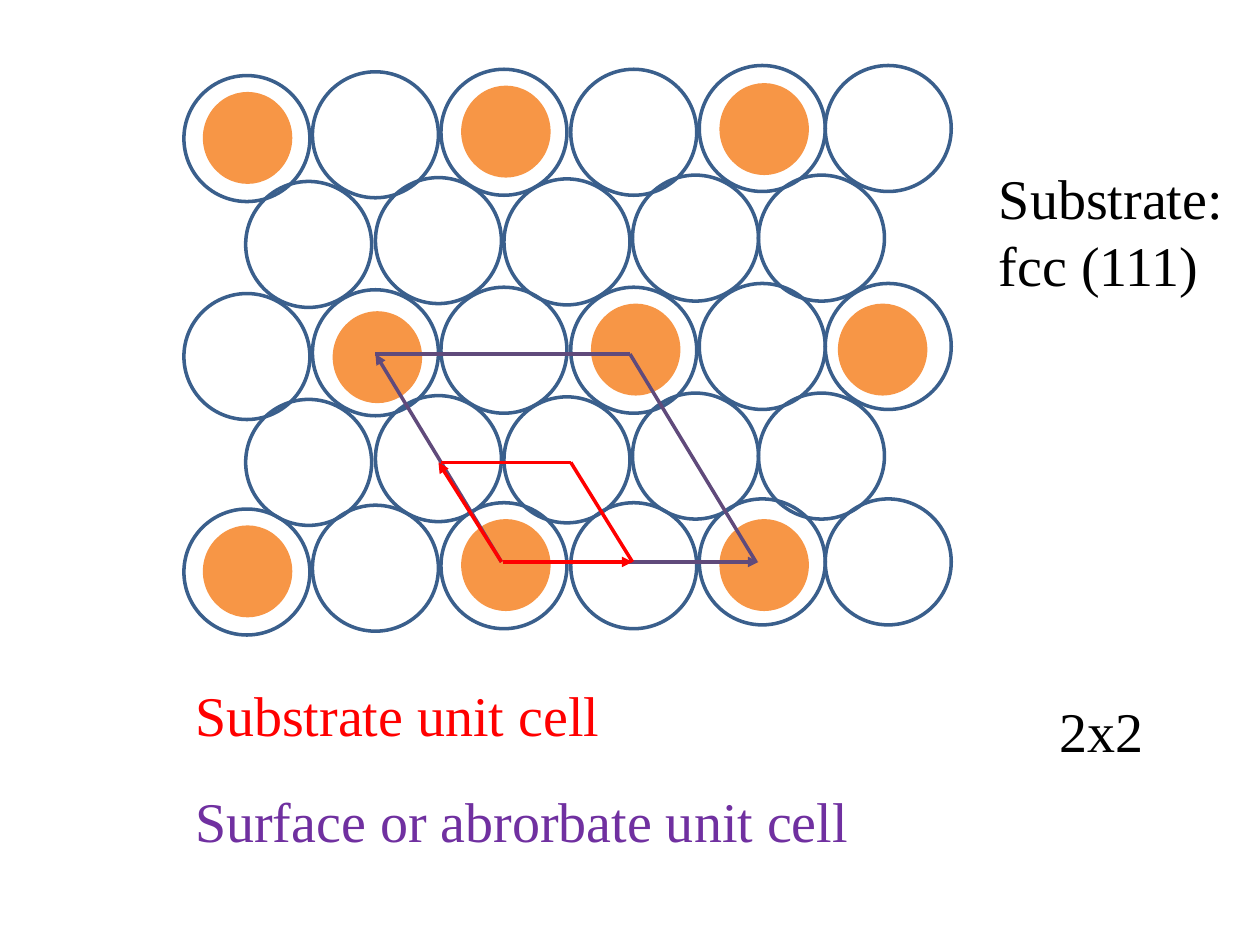
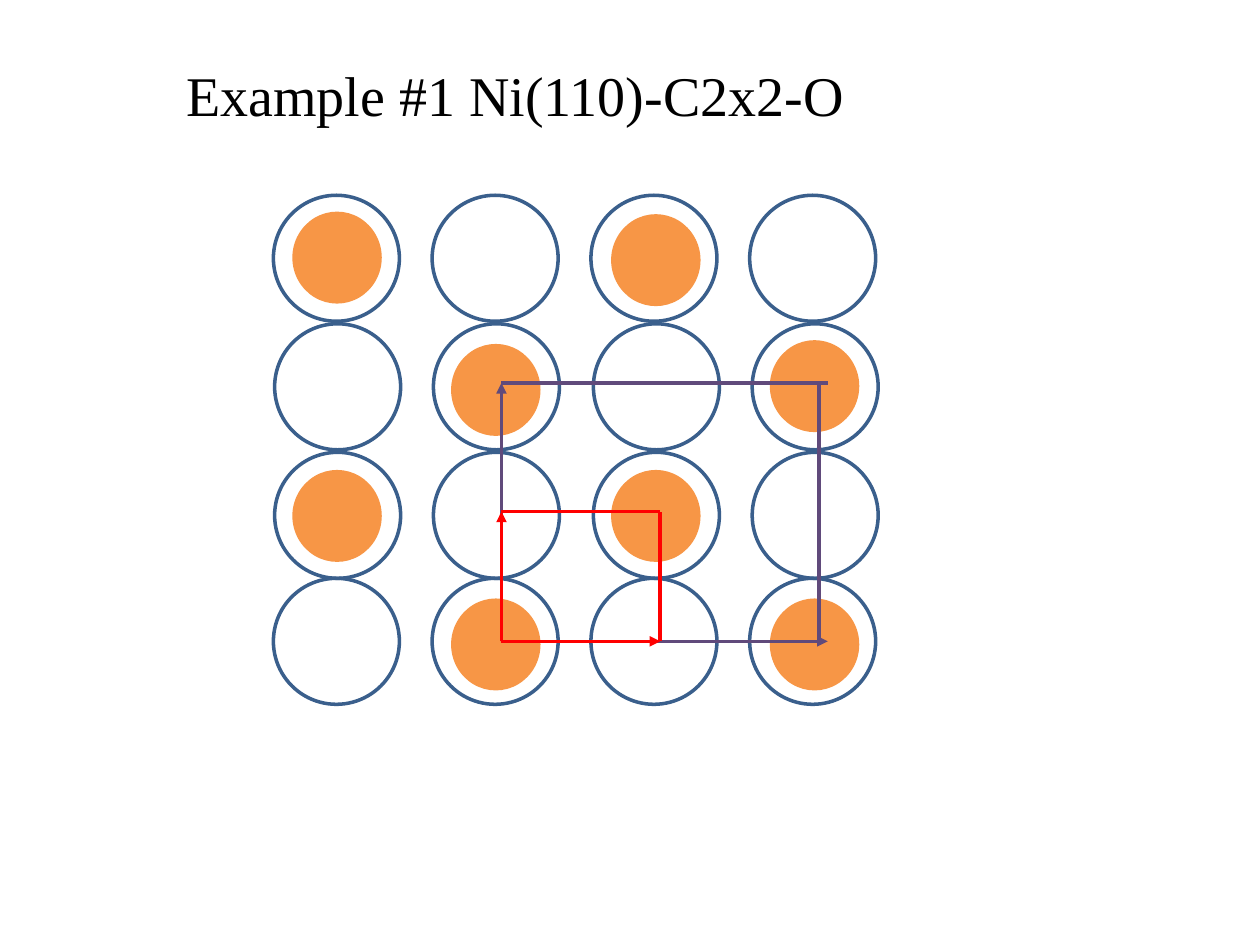
from dataclasses import dataclass

import pptx
import pptx.dml.color
import pptx.enum.shapes
import pptx.enum.text
import pptx.oxml.ns
import pptx.util
from lxml import etree

PX = 9144  # EMU per px, 100 px to the inch


@dataclass(frozen=True)
class Theme:
    font: str = "Times New Roman"
    text_size: int = 32
    line_width: int = 2
    text: str = "000000"
    atom: str = "3A5F8C"
    adsorbate: str = "F79646"
    substrate_cell: str = "FF0000"
    surface_cell: str = "604A7B"
    surface_label: str = "7030A0"


THEME = Theme()
ATOM_SIZE = (100, 100)
ADSORBATE_SIZE = (71, 73)


@dataclass(frozen=True)
class Row:
    """A row of circles: shared top, left edges, and how far each one sits below the top."""
    top: int
    lefts: tuple
    drops: tuple = (0,) * 6


@dataclass(frozen=True)
class Edge:
    """One side of a unit cell; lattice vectors carry an arrowhead."""
    start: tuple
    end: tuple
    color: str
    vector: bool = False


def px(length: int) -> int:
    return pptx.util.Emu(length * PX)


def rgb(color: str) -> pptx.dml.color.RGBColor:
    return pptx.dml.color.RGBColor.from_string(color)


def add_label(slide, text: str, left: int, top: int, width: int, height: int = 64, *,
              color: str = THEME.text, size: int = THEME.text_size) -> None:
    frame = slide.shapes.add_textbox(px(left), px(top), px(width), px(height)).text_frame
    frame.word_wrap = False
    frame.auto_size = pptx.enum.text.MSO_AUTO_SIZE.SHAPE_TO_FIT_TEXT
    frame.text = text
    for paragraph in frame.paragraphs:
        font = paragraph.runs[0].font
        font.name, font.size = THEME.font, pptx.util.Pt(size)
        font.color.rgb = rgb(color)


def add_circles(slide, rows: list, size: tuple, *, fill: str = "", line: str = "") -> None:
    for row in rows:
        for left, drop in zip(row.lefts, row.drops):
            circle = slide.shapes.add_shape(
                pptx.enum.shapes.MSO_SHAPE.OVAL,
                px(left), px(row.top + drop), px(size[0]), px(size[1]))
            circle.shadow.inherit = False
            if fill:
                circle.fill.solid()
                circle.fill.fore_color.rgb = rgb(fill)
            else:
                circle.fill.background()
            if line:
                circle.line.color.rgb = rgb(line)
                circle.line.width = pptx.util.Pt(THEME.line_width)
            else:
                circle.line.fill.background()


def add_edges(slide, edges: list) -> None:
    qn = pptx.oxml.ns.qn
    for edge in edges:
        side = slide.shapes.add_connector(
            pptx.enum.shapes.MSO_CONNECTOR.STRAIGHT,
            *(px(value) for value in edge.start + edge.end))
        side.line.color.rgb = rgb(edge.color)
        side.line.width = pptx.util.Pt(THEME.line_width)
        if edge.vector:
            etree.SubElement(side.line._get_or_add_ln(), qn("a:tailEnd"), type="triangle")
        etree.SubElement(side._element.spPr, qn("a:effectLst"))


def add_lattice(slide, atoms: list, adsorbates: list, edges: list) -> None:
    add_circles(slide, atoms, ATOM_SIZE, line=THEME.atom)
    add_circles(slide, adsorbates, ADSORBATE_SIZE, fill=THEME.adsorbate)
    add_edges(slide, edges)


def build_fcc_slide(slide) -> None:
    red, purple = THEME.substrate_cell, THEME.surface_cell

    # Close-packed rows: six atoms alternate with five
    long_lefts, long_drops = (146, 248, 350, 453, 555, 655), (8, 5, 3, 3, 0, 0)
    short_lefts, short_drops = (195, 298, 400, 502, 602), (5, 2, 3, 0, 0)
    atoms = [Row(top, long_lefts, long_drops) for top in (52, 225, 396)]
    atoms += [Row(top, short_lefts, short_drops) for top in (139, 312)]

    # Adsorbates on every second atom of the long rows
    outer_lefts = (161, 366, 571)
    adsorbates = [
        Row(66, outer_lefts, (7, 2, 0)),
        Row(241, (264, 469, 665), (6, 0, 0)),
        Row(412, outer_lefts, (5, 0, 0)),
    ]

    # Unit cells
    edges = [
        Edge((400, 446), (602, 446), purple, vector=True),
        Edge((399, 446), (502, 446), red, vector=True),
        Edge((398, 446), (298, 281), purple, vector=True),
        Edge((398, 446), (348, 367), red, vector=True),
        Edge((350, 367), (453, 367), red),
        Edge((502, 446), (453, 367), red),
        Edge((600, 446), (500, 281), purple),
        Edge((298, 281), (500, 281), purple),
    ]
    add_lattice(slide, atoms, adsorbates, edges)

    # Labels
    add_label(slide, "Substrate:\nfcc (111)", 783, 125, 200, 118)
    add_label(slide, "Substrate unit cell", 145, 535, 344, color=red)
    add_label(slide, "Surface or abrorbate unit cell", 145, 619, 544, color=THEME.surface_label)
    add_label(slide, "2x2", 831, 548, 88)


def build_nickel_slide(slide) -> None:
    red, purple = THEME.substrate_cell, THEME.surface_cell
    add_label(slide, "Example #1 Ni(110)-C2x2-O", 138, 43, 547)

    # Rectangular lattice: the outer rows sit slightly left of the inner ones
    outer_lefts, inner_lefts = (217, 343, 469, 595), (218, 344, 471, 597)
    atoms = [Row(155, outer_lefts), Row(257, inner_lefts),
             Row(359, inner_lefts), Row(459, outer_lefts)]

    # Adsorbates in a checkerboard
    odd_lefts, even_lefts = (232, 485), (358, 611)
    adsorbates = [Row(168, odd_lefts, (0, 2)), Row(270, even_lefts, (3, 0)),
                  Row(373, odd_lefts), Row(475, even_lefts)]

    # Unit cells
    origin = (398, 509)
    edges = [
        Edge(origin, (398, 304), purple, vector=True),
        Edge(origin, (657, 509), purple, vector=True),
        Edge((650, 509), (650, 304), purple),
        Edge((398, 304), (657, 304), purple),
        Edge(origin, (524, 509), red, vector=True),
        Edge(origin, (398, 406), red, vector=True),
        Edge((398, 406), (524, 406), red),
        Edge((524, 509), (524, 406), red),
    ]
    add_lattice(slide, atoms, adsorbates, edges)


def main() -> None:
    deck = pptx.Presentation()
    deck.slide_width, deck.slide_height = px(1000), px(750)
    blank = deck.slide_layouts[6]
    for build in (build_fcc_slide, build_nickel_slide):
        build(deck.slides.add_slide(blank))
    deck.save("out.pptx")


if __name__ == "__main__":
    main()
